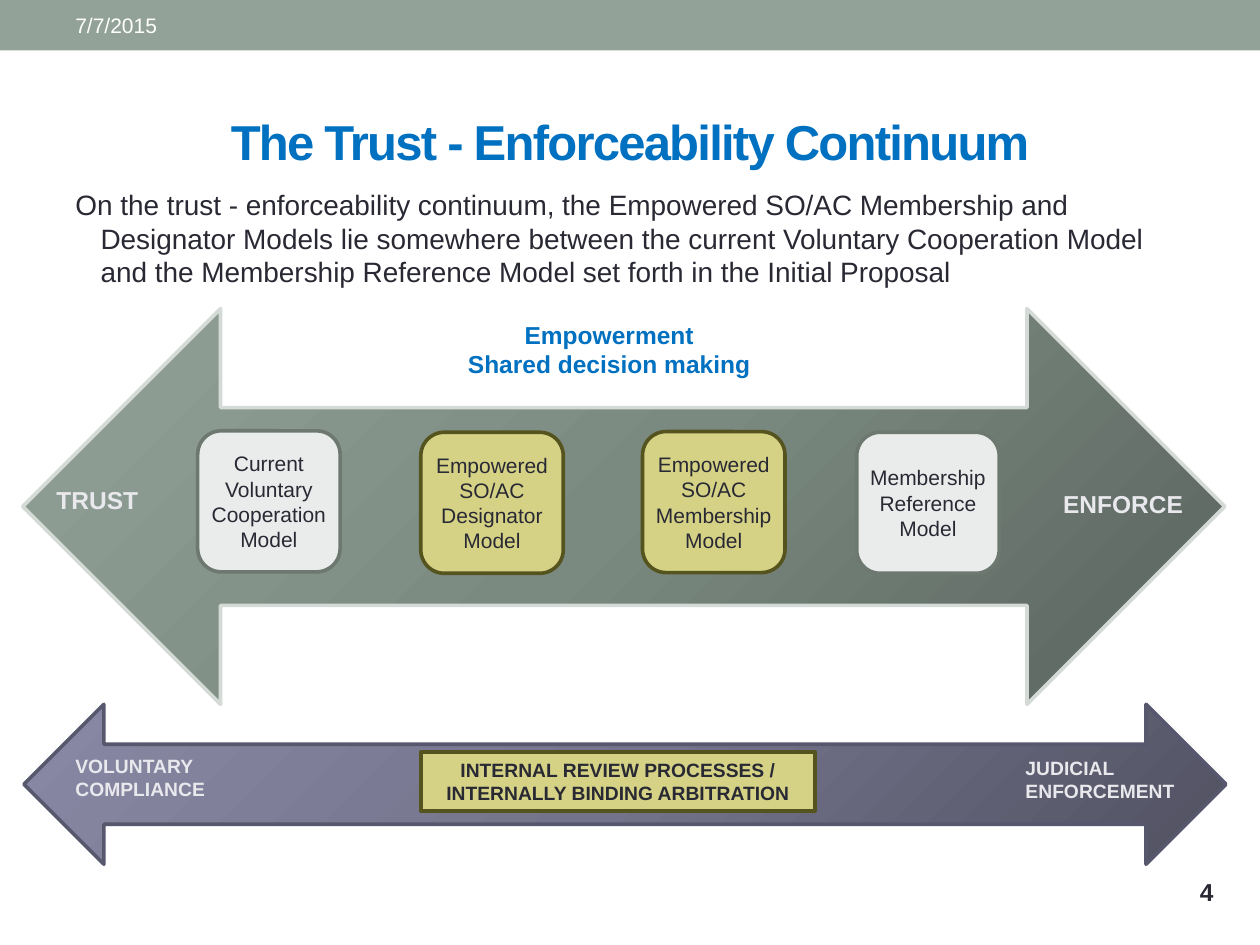
from dataclasses import dataclass

import lxml.etree
import pptx
import pptx.dml.color
import pptx.enum.shapes
import pptx.enum.text
import pptx.oxml.ns
import pptx.util

Pt = pptx.util.Pt
Align = pptx.enum.text.PP_ALIGN
Anchor = pptx.enum.text.MSO_ANCHOR
ShapeType = pptx.enum.shapes.MSO_SHAPE

FONT = "Arial"
INK = "292934"
BLUE = "0070C0"
PALE = "E8E8ED"
WHITE = "FFFFFF"
OLIVE = "D5D286"
OLIVE_LINE = "56541E"
GREY = "E9ECEB"
GREY_LINE = "6D7871"


@dataclass
class Box:
    left: float
    top: float
    width: float
    height: float


@dataclass
class Style:
    size: float
    color: str = INK
    bold: bool = False
    align: Align = Align.LEFT
    anchor: Anchor = Anchor.TOP
    margins: tuple[float, float] = (7.2, 3.6)


@dataclass
class Label:
    box: Box
    lines: list[str]
    style: Style


@dataclass
class Arrow:
    box: Box
    gradient: list[str]
    line: str


@dataclass
class Model:
    left: float
    top: float
    text: str
    fill: str
    line: str


BAND = Style(11, PALE, True)
END = Style(14, PALE, True)
MODEL = Style(12, align=Align.CENTER, anchor=Anchor.MIDDLE, margins=(3.6, 3.6))

ARROWS = [
    Arrow(Box(13, 176.4, 686.9, 226.1), ["56615B", "7B8A81", "92A399"], "D4DAD6"),
    Arrow(Box(13.7, 402.5, 686.9, 91.4), ["515162", "73738B", "8989A5"], "57576E"),
]

MODELS = [
    Model(113, 246.2, "Current Voluntary Cooperation Model", GREY, GREY_LINE),
    Model(240.5, 247, "Empowered SO/AC Designator Model", OLIVE, OLIVE_LINE),
    Model(367.2, 246.6, "Empowered SO/AC Membership Model", OLIVE, OLIVE_LINE),
    Model(489.6, 247, "Membership Reference Model", GREY, GREY_LINE),
]

LABELS = [
    Label(Box(36, 1.4, 228.2, 25.9), ["7/7/2015"],
          Style(12, WHITE, anchor=Anchor.MIDDLE)),
    Label(Box(25.2, 273.6, 64.8, 24.5), ["TRUST"], END),
    Label(Box(600.4, 275.8, 96.5, 24.5), ["ENFORCE"], END),
    Label(Box(36, 427.7, 105.8, 33.8), ["VOLUNTARY COMPLIANCE"], BAND),
    Label(Box(578.9, 428.4, 111.6, 33.8), ["JUDICIAL ENFORCEMENT"], BAND),
    Label(Box(616.3, 496.8, 84.2, 25.9), ["4"],
          Style(14, bold=True, align=Align.RIGHT, anchor=Anchor.MIDDLE)),
    Label(Box(247.7, 179.3, 200.9, 63.4), ["Empowerment", "Shared decision making"],
          Style(14, BLUE, True, Align.CENTER)),
]


def color(value: str) -> pptx.dml.color.RGBColor:
    return pptx.dml.color.RGBColor.from_string(value)


def place(shape, box: Box) -> None:
    shape.left, shape.top = Pt(box.left), Pt(box.top)
    shape.width, shape.height = Pt(box.width), Pt(box.height)


def write(shape, lines: list[str], style: Style):
    frame = shape.text_frame
    frame.word_wrap = True
    frame.auto_size = pptx.enum.text.MSO_AUTO_SIZE.NONE
    frame.vertical_anchor = style.anchor
    frame.margin_left = frame.margin_right = Pt(style.margins[0])
    frame.margin_top = frame.margin_bottom = Pt(style.margins[1])
    paragraph = frame.paragraphs[0]
    paragraph.alignment = style.align
    for index, line in enumerate(lines):
        if index:
            paragraph.add_line_break()
        run = paragraph.add_run()
        run.text = line
        run.font.name = FONT
        run.font.size = Pt(style.size)
        run.font.bold = style.bold
        run.font.color.rgb = color(style.color)
    return paragraph


def add_label(slide, label: Label):
    shape = slide.shapes.add_textbox(0, 0, 0, 0)
    place(shape, label.box)
    return write(shape, label.lines, label.style)


def add_block(slide, kind: ShapeType, box: Box, fill: str | None,
              line: str | None, weight: float = 2.08):
    shape = slide.shapes.add_shape(kind, 0, 0, 0, 0)
    place(shape, box)
    shape.shadow.inherit = False
    if fill:
        shape.fill.solid()
        shape.fill.fore_color.rgb = color(fill)
    if line:
        shape.line.color.rgb = color(line)
        shape.line.width = Pt(weight)
    else:
        shape.line.fill.background()
    return shape


def add_arrow(slide, arrow: Arrow) -> None:
    shape = add_block(slide, ShapeType.LEFT_RIGHT_ARROW, arrow.box, None, arrow.line)
    qn = pptx.oxml.ns.qn
    gradient = lxml.etree.Element(qn("a:gradFill"), rotWithShape="1")
    stops = lxml.etree.SubElement(gradient, qn("a:gsLst"))
    for index, value in enumerate(arrow.gradient):
        stop = lxml.etree.SubElement(stops, qn("a:gs"), pos=str(index * 50000))
        lxml.etree.SubElement(stop, qn("a:srgbClr"), val=value)
    focus = lxml.etree.SubElement(gradient, qn("a:path"), {"path": "circle"})
    lxml.etree.SubElement(focus, qn("a:fillToRect"), l="100000", t="100000")
    shape.element.spPr.find(qn("a:prstGeom")).addnext(gradient)


def add_model(slide, model: Model) -> None:
    shape = add_block(slide, ShapeType.ROUNDED_RECTANGLE,
                      Box(model.left, model.top, 81.4, 80.6), model.fill, model.line)
    write(shape, [model.text], MODEL)


def add_title(slide) -> None:
    title = slide.shapes.title
    place(title, Box(36, 41.8, 648, 77.8))
    paragraph = write(title, ["The Trust - Enforceability Continuum"],
                      Style(28, BLUE, True, Align.CENTER, Anchor.MIDDLE))
    paragraph.runs[0].font._element.set("spc", "-100")


def add_introduction(slide) -> None:
    text = ("On the trust - enforceability continuum, the Empowered SO/AC Membership "
            "and Designator Models lie somewhere between the current Voluntary "
            "Cooperation Model and the Membership Reference Model set forth in the "
            "Initial Proposal")
    paragraph = add_label(slide, Label(Box(36, 103.7, 648, 383.8), [text], Style(16)))
    paragraph.space_before = Pt(3.2)
    properties = paragraph._p.get_or_add_pPr()
    properties.set("marL", str(Pt(14.4)))
    properties.set("indent", str(-Pt(14.4)))


def main() -> None:
    presentation = pptx.Presentation()
    presentation.slide_width, presentation.slide_height = Pt(720), Pt(540)
    slide = presentation.slides.add_slide(presentation.slide_layouts[5])
    add_block(slide, ShapeType.RECTANGLE, Box(0, 0, 720, 28.8), "93A299", None)
    add_title(slide)
    add_introduction(slide)
    for arrow in ARROWS:
        add_arrow(slide, arrow)
    for model in MODELS:
        add_model(slide, model)
    review = add_block(slide, ShapeType.RECTANGLE, Box(240.5, 429.8, 225.4, 33.8),
                       OLIVE, OLIVE_LINE, 2.25)
    write(review, ["INTERNAL REVIEW PROCESSES / INTERNALLY BINDING ARBITRATION"],
          Style(11, bold=True, align=Align.CENTER))
    for label in LABELS:
        add_label(slide, label)
    presentation.save("out.pptx")


if __name__ == "__main__":
    main()
